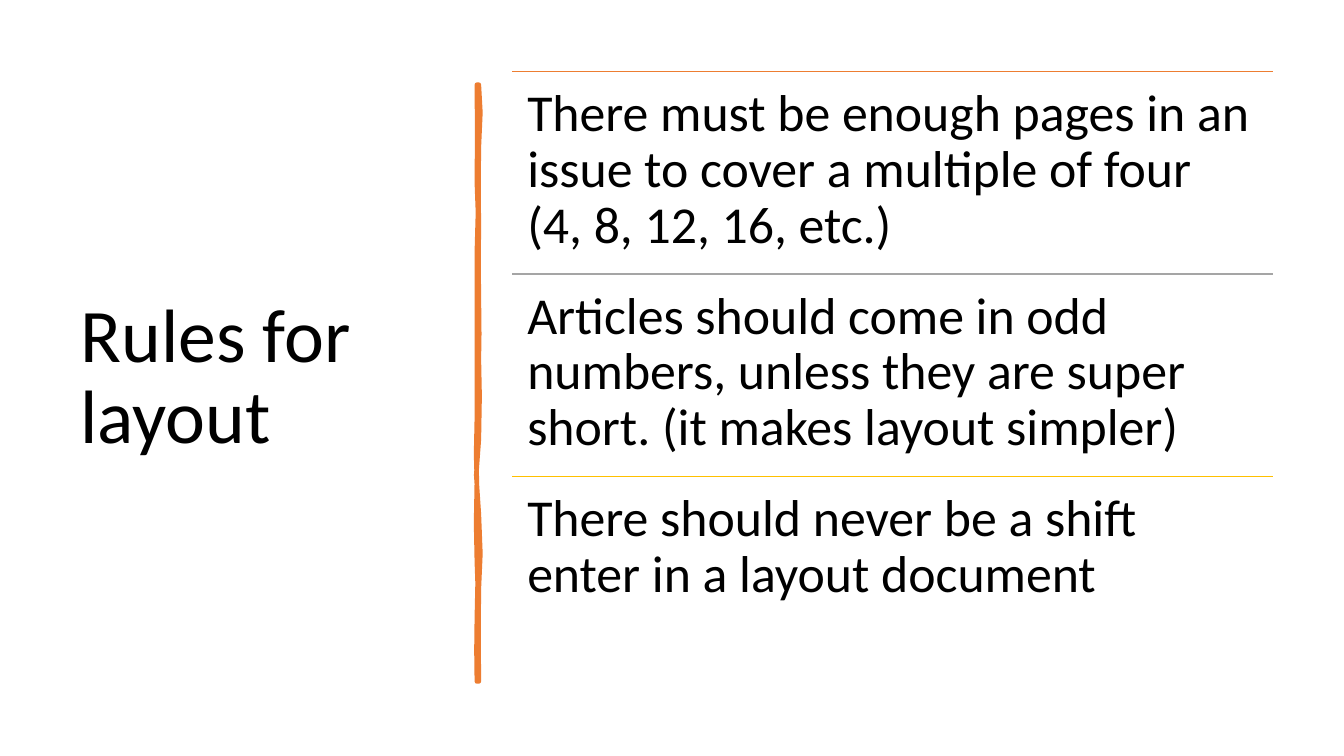
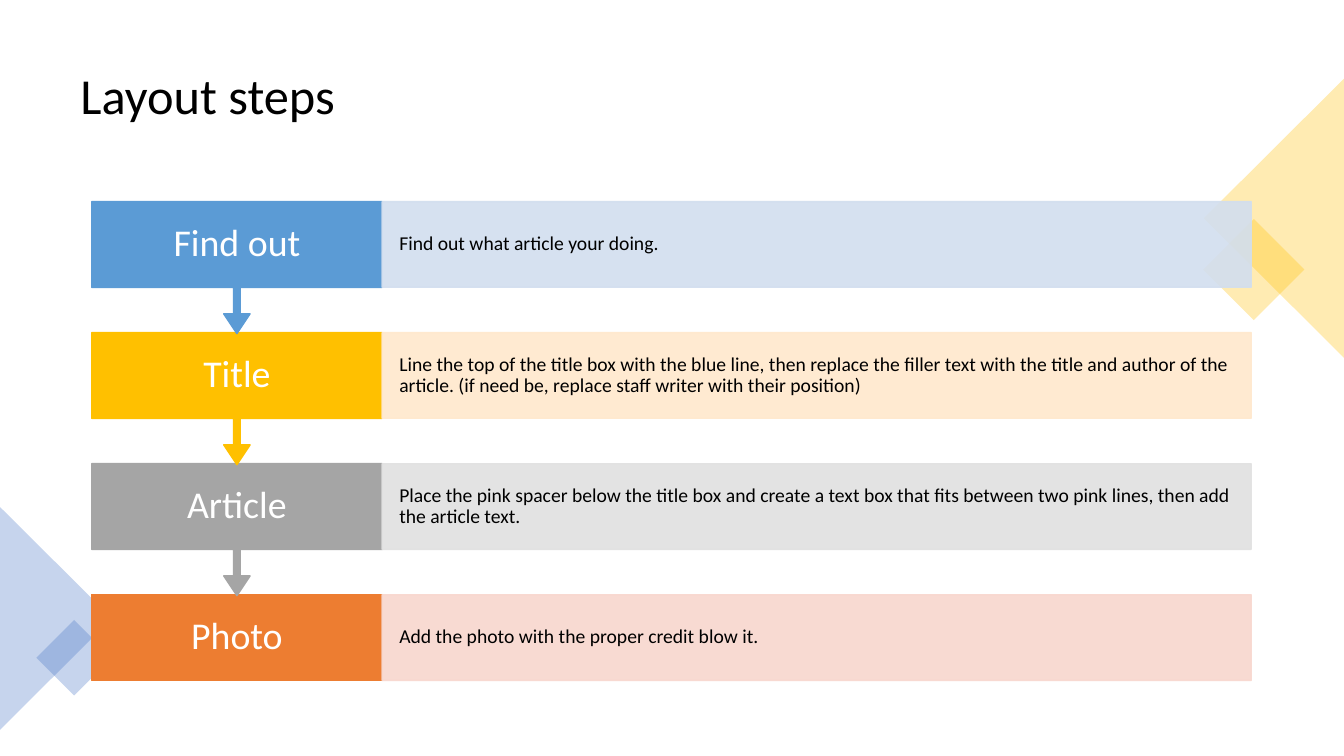
import pptx
import pptx.util
import pptx.dml.color
import pptx.enum.shapes
import pptx.enum.text
import pptx.oxml.ns
import lxml.etree

Inches, Pt = pptx.util.Inches, pptx.util.Pt
RGBColor = pptx.dml.color.RGBColor
Shapes = pptx.enum.shapes.MSO_SHAPE
Align, Anchor = pptx.enum.text.PP_ALIGN, pptx.enum.text.MSO_ANCHOR
qn = pptx.oxml.ns.qn

FONT = "Calibri"
BLACK = RGBColor(0x00, 0x00, 0x00)
WHITE = RGBColor(0xFF, 0xFF, 0xFF)
ORANGE = RGBColor(0xED, 0x7D, 0x31)
GRAY = RGBColor(0xA5, 0xA5, 0xA5)
GOLD = RGBColor(0xFF, 0xC0, 0x00)
SKY = RGBColor(0x5B, 0x9B, 0xD5)
BLUE = RGBColor(0x44, 0x72, 0xC4)
PALE_SKY = RGBColor(0xD2, 0xDE, 0xEF)
PALE_GOLD = RGBColor(0xFF, 0xE8, 0xCC)
PALE_GRAY = RGBColor(0xE1, 0xE1, 0xE1)
PALE_ORANGE = RGBColor(0xF8, 0xD7, 0xCE)

RULES_TITLE = "Rules for layout"
RULES = [
    ("There must be enough pages in an issue to cover a multiple of four (4, 8, 12, 16, etc.)", ORANGE),
    ("Articles should come in odd numbers, unless they are super short. (it makes layout simpler)", GRAY),
    ("There should never be a shift enter in a layout document", GOLD),
]
STEPS_TITLE = "Layout steps"
STEPS = [
    ("Find out", "Find out what article your doing.", SKY, PALE_SKY),
    ("Title", "Line the top of the title box with the blue line, then replace the filler text with the "
     "title and author of the article. (if need be, replace staff writer with their position)",
     GOLD, PALE_GOLD),
    ("Article", "Place the pink spacer below the title box and create a text box that fits between two "
     "pink lines, then add the article text.", GRAY, PALE_GRAY),
    ("Photo", "Add the photo with the proper credit blow it.", ORANGE, PALE_ORANGE),
]
# kind, (left, top, width, height), rotation, colour
CORNER_SHAPES = [
    (Shapes.RECTANGLE, (12.08, 2.32, 0.71, 0.71), 45, GOLD),
    (Shapes.ISOSCELES_TRIANGLE, (11.25, 1.47, 2.77, 1.39), 270, GOLD),
    (Shapes.ISOSCELES_TRIANGLE, (-0.55, 5.58, 2.21, 1.11), 90, BLUE),
    (Shapes.RECTANGLE, (0.47, 6.26, 0.53, 0.53), 45, BLUE),
]
# Each brush stroke segment: two control points and an end point
STROKE_START = (4.75, 0.84)
STROKE_CURVES = [
    ((4.77, 1.02), (4.77, 1.19), (4.75, 1.46)),
    ((4.73, 1.73), (4.76, 1.95), (4.75, 2.26)),
    ((4.74, 2.57), (4.75, 2.62), (4.75, 2.94)),
    ((4.74, 3.25), (4.77, 3.42), (4.75, 3.56)),
    ((4.73, 3.7), (4.79, 4.14), (4.75, 4.36)),
    ((4.71, 4.57), (4.72, 4.84), (4.75, 5.1)),
    ((4.77, 5.36), (4.77, 5.64), (4.75, 5.84)),
    ((4.73, 6.03), (4.76, 6.5), (4.75, 6.76)),
    ((4.74, 6.76), (4.73, 6.76), (4.73, 6.76)),
    ((4.74, 6.46), (4.71, 6.44), (4.73, 6.13)),
    ((4.74, 5.83), (4.74, 5.7), (4.73, 5.57)),
    ((4.72, 5.44), (4.72, 4.95), (4.73, 4.77)),
    ((4.73, 4.59), (4.71, 4.45), (4.73, 4.15)),
    ((4.74, 3.86), (4.72, 3.73), (4.73, 3.35)),
    ((4.74, 2.98), (4.72, 2.81), (4.73, 2.5)),
    ((4.74, 2.18), (4.75, 2), (4.73, 1.81)),
    ((4.7, 1.63), (4.77, 1.04), (4.73, 0.84)),
]
CURVE_STEPS = 2


def write(shape, text, size, color=BLACK, align=Align.LEFT, anchor=Anchor.MIDDLE, insets=(0.1, 0.05)):
    """Put one formatted paragraph in a shape; insets are (sides, top and bottom)."""
    frame = shape.text_frame
    frame.word_wrap = True
    frame.vertical_anchor = anchor
    frame.margin_left = frame.margin_right = Inches(insets[0])
    frame.margin_top = frame.margin_bottom = Inches(insets[1])
    para = frame.paragraphs[0]
    para.alignment = align
    para.line_spacing = 0.9
    span = para.add_run()
    span.text = text
    span.font.size = Pt(size)
    span.font.name = FONT
    span.font.color.rgb = color


def add_text(page, place, text, size, **style):
    box = page.shapes.add_textbox(*map(Inches, place))
    write(box, text, size, **style)


def paint(shape, color, line_width=0, opacity=100):
    shape.shadow.inherit = False
    shape.fill.solid()
    shape.fill.fore_color.rgb = color
    if line_width:
        shape.line.color.rgb = color
        shape.line.width = Pt(line_width)
    else:
        shape.line.fill.background()
    if opacity < 100:
        for tint in shape._element.spPr.iter(qn("a:srgbClr")):
            lxml.etree.SubElement(tint, qn("a:alpha")).set("val", str(opacity * 1000))


def add_block(page, kind, place, color, rotation=0, **style):
    block = page.shapes.add_shape(kind, *map(Inches, place))
    block.rotation = rotation
    paint(block, color, **style)
    return block


def add_rule_line(page, left, top, width, color):
    line = page.shapes.add_connector(pptx.enum.shapes.MSO_CONNECTOR.STRAIGHT,
                                     Inches(left), Inches(top), Inches(left + width), Inches(top))
    line.line.color.rgb = color
    line.line.width = Pt(1)
    lxml.etree.SubElement(line._element.spPr, qn("a:effectLst"))


def stroke_points():
    """Flatten the Bezier segments of the brush stroke into points."""
    start = STROKE_START
    for first, second, end in STROKE_CURVES:
        for step in range(1, CURVE_STEPS + 1):
            t = step / CURVE_STEPS
            u = 1 - t
            yield tuple(Inches(u**3 * a + 3 * u * u * t * b + 3 * u * t * t * c + t**3 * d)
                        for a, b, c, d in zip(start, first, second, end))
        start = end


def add_brush_stroke(page):
    builder = page.shapes.build_freeform(*map(Inches, STROKE_START))
    builder.add_line_segments(list(stroke_points()), close=True)
    stroke = builder.convert_to_shape()
    paint(stroke, ORANGE, line_width=3.25)
    lxml.etree.SubElement(stroke.line._get_or_add_ln(), qn("a:round"))


def build_rules(page):
    left, top, pitch = 5.08, 0.71, 2.01
    line_width, text_width = 7.55, 7.5
    add_text(page, (0.7, 0.7, 3.74, 6.11), RULES_TITLE, 54)
    add_brush_stroke(page)
    for index, (rule, color) in enumerate(RULES):
        row_top = top + index * pitch
        add_rule_line(page, left, row_top, line_width, color)
        add_text(page, (left, row_top, text_width, pitch), rule, 37,
                 anchor=Anchor.TOP, insets=(0.15, 0.15))


def build_steps(page):
    left, top, pitch, height = 0.91, 2, 1.3, 0.85
    label_width, detail_width, callout_height = 2.88, 8.62, 1.31
    add_text(page, (0.7, 0.35, 11.93, 1.24), STEPS_TITLE, 36)
    for kind, place, rotation, color in CORNER_SHAPES:
        add_block(page, kind, place, color, rotation, opacity=30)
    last = len(STEPS) - 1
    # Bottom row first, so that each arrow tip lies over the row below it
    for index in range(last, -1, -1):
        name, detail, color, pale = STEPS[index]
        row_top = top + index * pitch
        if index == last:
            label = add_block(page, Shapes.RECTANGLE, (left, row_top, label_width, height),
                              color, line_width=1)
        else:
            label = add_block(page, Shapes.DOWN_ARROW_CALLOUT,
                              (left, row_top, label_width, callout_height), color, line_width=1)
            for position, value in enumerate((0.05, 0.1, 0.15, 0.65)):
                label.adjustments[position] = value
        write(label, name, 27, color=WHITE, align=Align.CENTER, insets=(0.2, 0.21))
        panel = add_block(page, Shapes.RECTANGLE, (left + label_width, row_top, detail_width, height),
                          pale, line_width=1, opacity=90)
        write(panel, detail, 14, insets=(0.17, 0.19))


def main():
    deck = pptx.Presentation()
    deck.slide_width, deck.slide_height = Inches(13.33), Inches(7.5)
    for build in (build_rules, build_steps):
        build(deck.slides.add_slide(deck.slide_layouts[6]))
    deck.save("out.pptx")


if __name__ == "__main__":
    main()
